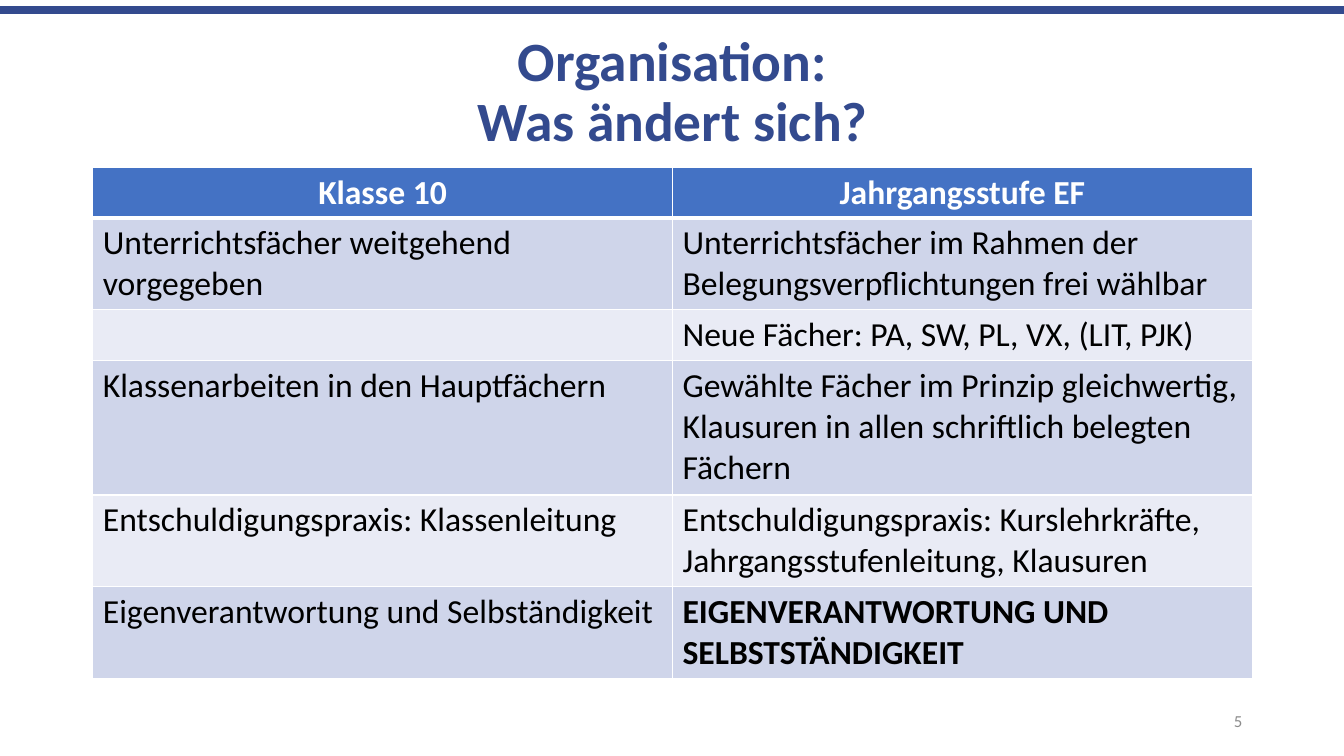
import pptx
import pptx.dml.color
import pptx.enum.shapes
import pptx.enum.text
import pptx.oxml.ns
import pptx.util
from lxml import etree

Inches = pptx.util.Inches
Pt = pptx.util.Pt
ALIGN = pptx.enum.text.PP_ALIGN
MIDDLE = pptx.enum.text.MSO_ANCHOR.MIDDLE

NAVY = "334A8E"
WHITE = "FFFFFF"
BLACK = "000000"
HEADER_FILL = "4472C4"
BAND_FILLS = ("CFD5EA", "E9EBF5")
HEADINGS = ("Klasse 10", "Jahrgangsstufe EF")
COMPARISONS = (
    ("Unterrichtsfächer weitgehend vorgegeben",
     "Unterrichtsfächer im Rahmen der Belegungsverpflichtungen frei wählbar"),
    ("", "Neue Fächer: PA, SW, PL, VX, (LIT, PJK)"),
    ("Klassenarbeiten in den Hauptfächern",
     "Gewählte Fächer im Prinzip gleichwertig, Klausuren in allen schriftlich belegten Fächern"),
    ("Entschuldigungspraxis: Klassenleitung",
     "Entschuldigungspraxis: Kurslehrkräfte, Jahrgangsstufenleitung, Klausuren"),
    ("Eigenverantwortung und Selbständigkeit",
     "EIGENVERANTWORTUNG UND SELBSTSTÄNDIGKEIT"),
)
ROW_HEIGHTS = (0.5, 0.91, 0.51, 1.33, 0.91, 0.91)


def color(hex_string):
    """Return the colour for a hex string."""
    return pptx.dml.color.RGBColor.from_string(hex_string)


def add_run(paragraph, text, size, hex_string, bold=False):
    """Add one formatted run to a paragraph."""
    run = paragraph.add_run()
    run.text = text
    run.font.name = "Calibri"
    run.font.size = Pt(size)
    run.font.bold = bold
    run.font.color.rgb = color(hex_string)


def add_text_box(slide, left, top, width, height, alignment):
    """Add a wrapped, vertically centred box and return its paragraph."""
    box = slide.shapes.add_textbox(Inches(left), Inches(top), Inches(width), Inches(height))
    box.text_frame.word_wrap = True
    box.text_frame.vertical_anchor = MIDDLE
    paragraph = box.text_frame.paragraphs[0]
    paragraph.alignment = alignment
    return paragraph


def add_top_rule(slide, left, top, width):
    """Draw the thick rule along the top of the slide."""
    rule = slide.shapes.add_connector(
        pptx.enum.shapes.MSO_CONNECTOR.STRAIGHT,
        Inches(left), Inches(top), Inches(left + width), Inches(top))
    rule.line.color.rgb = color(NAVY)
    rule.line.width = Pt(6)
    etree.SubElement(rule._element.spPr, pptx.oxml.ns.qn("a:effectLst"))


def add_title(slide, left, top, width, height):
    """Place the two-line title."""
    paragraph = add_text_box(slide, left, top, width, height, ALIGN.CENTER)
    paragraph.line_spacing = 0.9
    add_run(paragraph, "Organisation:", 39.6, NAVY, True)
    paragraph.add_line_break()
    add_run(paragraph, "Was ändert sich?", 39.6, NAVY, True)


def set_borders(cell, bottom_width, top_width):
    """Give a cell white borders with the given bottom and top widths."""
    properties = cell._tc.get_or_add_tcPr()
    for side, width in (("L", 1), ("R", 1), ("T", top_width), ("B", bottom_width)):
        line = etree.SubElement(properties, pptx.oxml.ns.qn(f"a:ln{side}"), w=str(Pt(width)))
        fill = etree.SubElement(line, pptx.oxml.ns.qn("a:solidFill"))
        etree.SubElement(fill, pptx.oxml.ns.qn("a:srgbClr"), val=WHITE)


def add_comparison_table(slide, left, top, width):
    """Place the comparison of both school years."""
    rows = (HEADINGS,) + COMPARISONS
    table = slide.shapes.add_table(
        len(rows), len(HEADINGS), Inches(left), Inches(top),
        Inches(width), Inches(sum(ROW_HEIGHTS))).table
    for column in table.columns:
        column.width = Inches(width / len(HEADINGS))
    for row_index, texts in enumerate(rows):
        table.rows[row_index].height = Inches(ROW_HEIGHTS[row_index])
        is_header = row_index == 0
        for column_index, text in enumerate(texts):
            cell = table.cell(row_index, column_index)
            set_borders(cell, 3 if is_header else 1, 3 if row_index == 1 else 1)
            cell.fill.solid()
            cell.fill.fore_color.rgb = color(
                HEADER_FILL if is_header else BAND_FILLS[(row_index - 1) % 2])
            paragraph = cell.text_frame.paragraphs[0]
            paragraph.alignment = ALIGN.CENTER if is_header else ALIGN.LEFT
            if text:
                add_run(paragraph, text, 24, WHITE if is_header else BLACK,
                        is_header or text.isupper())


def add_slide_number(slide, left, top, width, height):
    """Place the slide number."""
    paragraph = add_text_box(slide, left, top, width, height, ALIGN.RIGHT)
    add_run(paragraph, "5", 12, "8C8C8C")


def main():
    """Build and save the slide."""
    presentation = pptx.Presentation()
    presentation.slide_width = Inches(13.33)
    presentation.slide_height = Inches(7.5)
    slide = presentation.slides.add_slide(presentation.slide_layouts[6])
    add_top_rule(slide, 0, 0.1, 13.33)
    add_title(slide, 0.92, 0.4, 11.5, 1.05)
    add_comparison_table(slide, 0.92, 1.66, 11.5)
    add_slide_number(slide, 9.42, 6.95, 3, 0.4)
    presentation.save("out.pptx")


if __name__ == "__main__":
    main()
